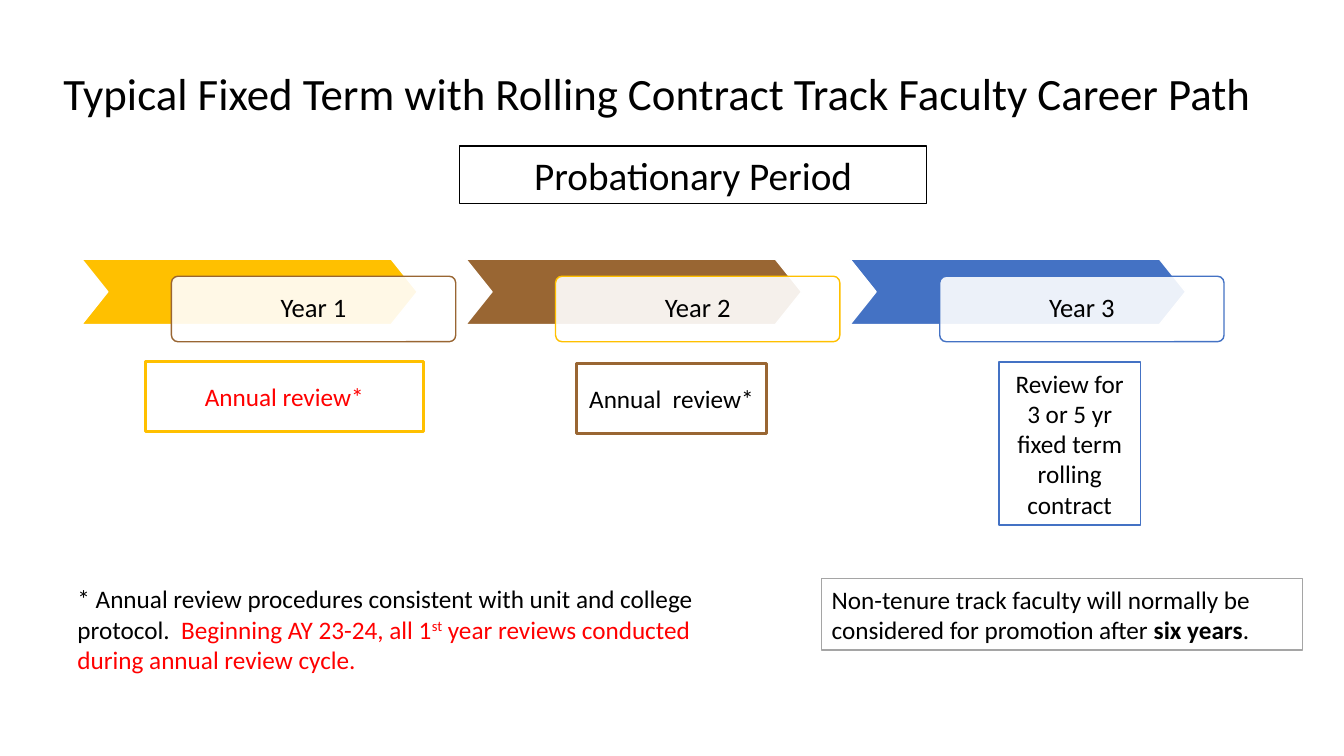
from dataclasses import dataclass

from lxml.etree import SubElement
from pptx import Presentation
from pptx.dml.color import RGBColor
from pptx.enum.shapes import MSO_SHAPE as SHAPE
from pptx.enum.text import MSO_ANCHOR as ANCHOR, PP_ALIGN as ALIGN
from pptx.oxml.ns import qn
from pptx.util import Inches, Pt


@dataclass(frozen=True)
class Theme:
    font: str = "Calibri"
    black: str = "000000"
    white: str = "FFFFFF"
    red: str = "FF0000"
    gold: str = "FFC000"
    brown: str = "996633"
    blue: str = "4472C4"
    gray: str = "A5A5A5"
    title: int = 32
    period: int = 28
    year: int = 19
    body: int = 18


T = Theme()


def rgb(value):
    return RGBColor.from_string(value)


def add_text(sp, runs, size, align=ALIGN.LEFT, anchor=ANCHOR.MIDDLE, spacing=None):
    tf = sp.text_frame
    tf.word_wrap = True
    tf.vertical_anchor = anchor
    p = tf.paragraphs[0]
    p.alignment = align
    if spacing:
        p.line_spacing = spacing
    for text, color, style in runs:
        r = p.add_run()
        r.text = text
        r.font.name = T.font
        r.font.size = Pt(size)
        r.font.color.rgb = rgb(color)
        r.font.bold = style == "bold"
        if style == "super":
            r._r.get_or_add_rPr().set("baseline", "30000")


def add_label(slide, box, runs, size, **layout):
    sp = slide.shapes.add_textbox(*map(Inches, box))
    add_text(sp, runs, size, **layout)


def add_box(slide, kind, box, line, fill=None, weight=1, adj=None, alpha=None):
    sp = slide.shapes.add_shape(kind, *map(Inches, box))
    sp.shadow.inherit = False
    sp.line.color.rgb = rgb(line)
    sp.line.width = Pt(weight)
    if adj is not None:
        sp.adjustments[0] = adj
    if fill:
        sp.fill.solid()
        sp.fill.fore_color.rgb = rgb(fill)
    else:
        sp.fill.background()
    if alpha:
        color = sp._element.spPr.find(qn("a:solidFill"))[0]
        SubElement(color, qn("a:alpha")).set("val", str(alpha * 1000))
    return sp


def add_year(slide, index, fill, outline):
    left = 0.81 + 3.81 * index
    add_box(slide, SHAPE.CHEVRON, (left, 2.57, 3.33, 0.65), T.white, fill, adj=0.4)
    card = add_box(slide, SHAPE.ROUNDED_RECTANGLE, (left + 0.89, 2.74, 2.82, 0.65),
                   outline, T.white, adj=0.1, alpha=90)
    add_text(card, [(f"Year {index + 1}", T.black, None)], T.year, ALIGN.CENTER,
             spacing=0.9)


def add_note(slide, box, line, runs, size=T.body, align=ALIGN.CENTER, **look):
    sp = add_box(slide, SHAPE.RECTANGLE, box, line, **look)
    add_text(sp, runs, size, align)


def main():
    prs = Presentation()
    prs.slide_width, prs.slide_height = Inches(13.33), Inches(7.5)
    slide = prs.slides.add_slide(prs.slide_layouts[6])

    add_label(slide, (0.53, 0.33, 12.28, 1.25),
              [("Typical Fixed Term with Rolling Contract Track Faculty Career Path",
                T.black, None)], T.title, spacing=0.9)

    years = [(T.gold, T.brown), (T.brown, T.gold), (T.blue, T.blue)]
    for index, (fill, outline) in enumerate(years):
        add_year(slide, index, fill, outline)

    add_note(slide, (4.56, 1.45, 4.63, 0.57), T.black,
             [("Probationary Period", T.black, None)], T.period, fill=T.white)
    add_note(slide, (1.44, 3.59, 2.76, 0.69), T.gold,
             [("Annual review*", T.red, None)], weight=2.25)
    add_note(slide, (5.72, 3.61, 1.88, 0.69), T.brown,
             [("Annual  review*", T.black, None)], weight=2.25)
    add_note(slide, (9.91, 3.59, 1.4, 1.62), T.blue,
             [("Review for 3 or 5 yr fixed term rolling contract", T.black, None)],
             fill=T.white)
    add_note(slide, (8.15, 5.74, 4.77, 0.71), T.gray,
             [("Non-tenure track faculty will normally be considered for promotion after ",
               T.black, None),
              ("six years", T.black, "bold"),
              (".", T.black, None)], align=ALIGN.LEFT, fill=T.white)

    add_label(slide, (0.67, 5.74, 6.4, 1.01),
              [("* Annual review procedures consistent with unit and college protocol.  ",
                T.black, None),
               ("Beginning AY 23-24, all 1", T.red, None),
               ("st", T.red, "super"),
               (" year reviews conducted during annual review cycle.", T.red, None)],
              T.body, anchor=ANCHOR.TOP)

    prs.save("out.pptx")


if __name__ == "__main__":
    main()
